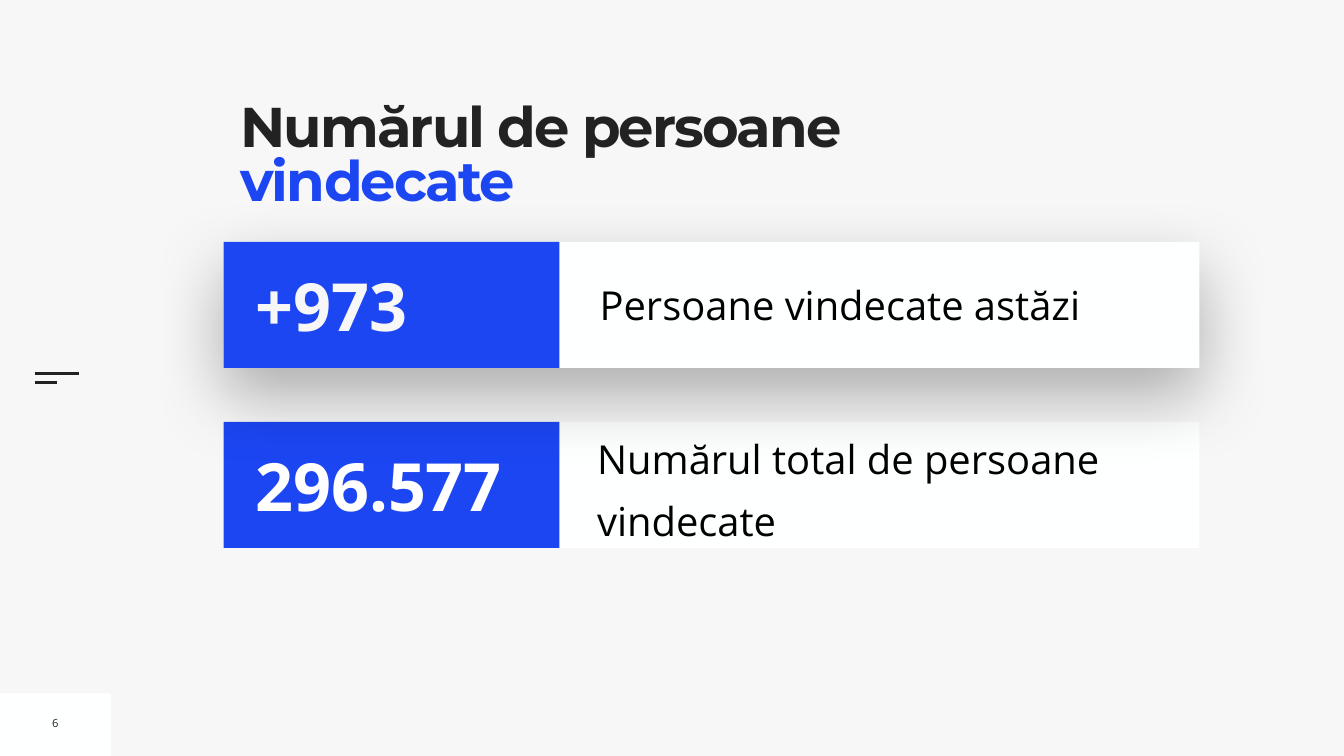
from dataclasses import dataclass

from lxml import etree
from pptx import Presentation
from pptx.dml.color import RGBColor
from pptx.enum.shapes import MSO_CONNECTOR, MSO_SHAPE
from pptx.enum.text import MSO_ANCHOR, MSO_AUTO_SIZE, PP_ALIGN
from pptx.oxml.ns import qn
from pptx.util import Inches, Pt

RECT = MSO_SHAPE.RECTANGLE
LINE = MSO_CONNECTOR.STRAIGHT
TOP, MIDDLE = MSO_ANCHOR.TOP, MSO_ANCHOR.MIDDLE
LEFT, CENTER = PP_ALIGN.LEFT, PP_ALIGN.CENTER
NO_FIT = MSO_AUTO_SIZE.NONE


@dataclass(frozen=True)
class Theme:
    background: str = "F7F7F7"
    panel: str = "FEFFFF"
    accent: str = "1D46F3"
    ink: str = "222222"
    label: str = "000000"
    white: str = "FFFFFF"
    heading_font: str = "Montserrat"
    body_font: str = "Open Sans"
    title_size: int = 80
    number_size: int = 95
    label_size: int = 57
    page_size: int = 16


def rgb(color):
    return RGBColor.from_string(color)


class SlideBuilder:
    def __init__(self, prs, theme):
        self.theme = theme
        self.s = prs.slides.add_slide(prs.slide_layouts[5])
        fill = self.s.background.fill
        fill.solid()
        fill.fore_color.rgb = rgb(theme.background)

    def style(self, p, font, size, color=None, bold=False):
        p.font.name = font
        p.font.size = Pt(size)
        p.font.bold = bold
        if color:
            p.font.color.rgb = rgb(color)

    def frame(self, sp, inset, anchor, wrap=True):
        tf = sp.text_frame
        tf.auto_size = NO_FIT
        tf.word_wrap = wrap
        tf.vertical_anchor = anchor
        tf.margin_left = tf.margin_right = Inches(inset)
        tf.margin_top = tf.margin_bottom = Inches(inset)
        return tf

    def rect(self, box, color, parent=None):
        sp = (parent or self.s).shapes.add_shape(RECT, *map(Inches, box))
        sp.shadow.inherit = False
        sp.fill.solid()
        sp.fill.fore_color.rgb = rgb(color)
        sp.line.fill.background()
        return sp

    def cast_shadow(self, sp, blur=100, distance=40, angle=90, alpha=30):
        """Add a soft outer shadow; blur and distance are in points."""
        effects = sp.element.spPr.find(qn("a:effectLst"))
        shadow = etree.SubElement(
            effects, qn("a:outerShdw"), blurRad=str(Pt(blur)),
            dist=str(Pt(distance)), dir=str(angle * 60000), rotWithShape="0")
        color = etree.SubElement(shadow, qn("a:srgbClr"), val="000000")
        etree.SubElement(color, qn("a:alpha"), val=str(alpha * 1000))

    def line(self, x1, x2, y):
        c = self.s.shapes.add_connector(LINE, *map(Inches, (x1, y, x2, y)))
        c.line.color.rgb = rgb(self.theme.ink)
        c.line.width = Pt(3)
        etree.SubElement(c.element.spPr, qn("a:effectLst"))

    def text(self, box, text, size, color, parent=None, inset=0.1,
             bold=False, align=LEFT, wrap=True):
        sp = (parent or self.s).shapes.add_textbox(*map(Inches, box))
        tf = self.frame(sp, inset, MIDDLE, wrap)
        p = tf.paragraphs[0]
        p.text = text
        p.alignment = align
        self.style(p, self.theme.body_font, size, color, bold)
        return p

    def title(self, box, parts):
        sp = self.s.shapes.title
        sp.left, sp.top, sp.width, sp.height = map(Inches, box)
        sp.fill.solid()
        sp.fill.fore_color.rgb = rgb(self.theme.background)
        p = self.frame(sp, 0, TOP).paragraphs[0]
        p.alignment = LEFT
        p.line_spacing = 0.8
        self.style(p, self.theme.heading_font, self.theme.title_size, bold=True)
        for text, color in parts:
            r = p.add_run()
            r.text = text
            r.font.color.rgb = rgb(color)
            r.font._element.set("spc", "-270")

    def stat_card(self, top, number, number_color, label, label_box,
                  inset=0.1, raised=False):
        """Draw a number on an accent block beside its label on a panel."""
        t = self.theme
        group = self.s.shapes.add_group_shape()
        panel = self.rect((4.44, top, 19.36, 2.5), t.panel, group)
        if raised:
            self.cast_shadow(panel)
        p = self.text(label_box, label, t.label_size, t.label, group, inset)
        self.rect((4.44, top, 6.66, 2.5), t.accent, group)
        self.text((4.97, top + 0.35, 6.03, 1.8), number, t.number_size,
                  number_color, group, bold=True)
        return p


def main():
    prs = Presentation()
    prs.slide_width, prs.slide_height = Inches(26.67), Inches(15)
    theme = Theme()
    b = SlideBuilder(prs, theme)

    b.title((4.77, 2.07, 13.01, 2.73),
            [("Numărul de persoane ", theme.ink), ("vindecate", theme.accent)])
    b.rect((0, 13.76, 2.2, 1.24), theme.panel)
    b.line(0.69, 1.57, 7.41)
    b.line(0.69, 1.13, 7.59)
    b.text((0.93, 14.09, 0.34, 0.51), "6", theme.page_size, theme.ink,
           align=CENTER, wrap=False)

    # The raised card comes last so that its shadow falls on the lower one.
    p = b.stat_card(8.37, "296.577", theme.white,
                    "Numărul total de persoane vindecate",
                    (11.85, 8.39, 11.95, 2.36), inset=0)
    p.line_spacing = 1.3
    p.space_before = Pt(20)
    b.stat_card(4.8, "+973", theme.background, "Persoane vindecate astăzi",
                (11.8, 5.47, 11.76, 1.16), raised=True)

    prs.save("out.pptx")


if __name__ == "__main__":
    main()
